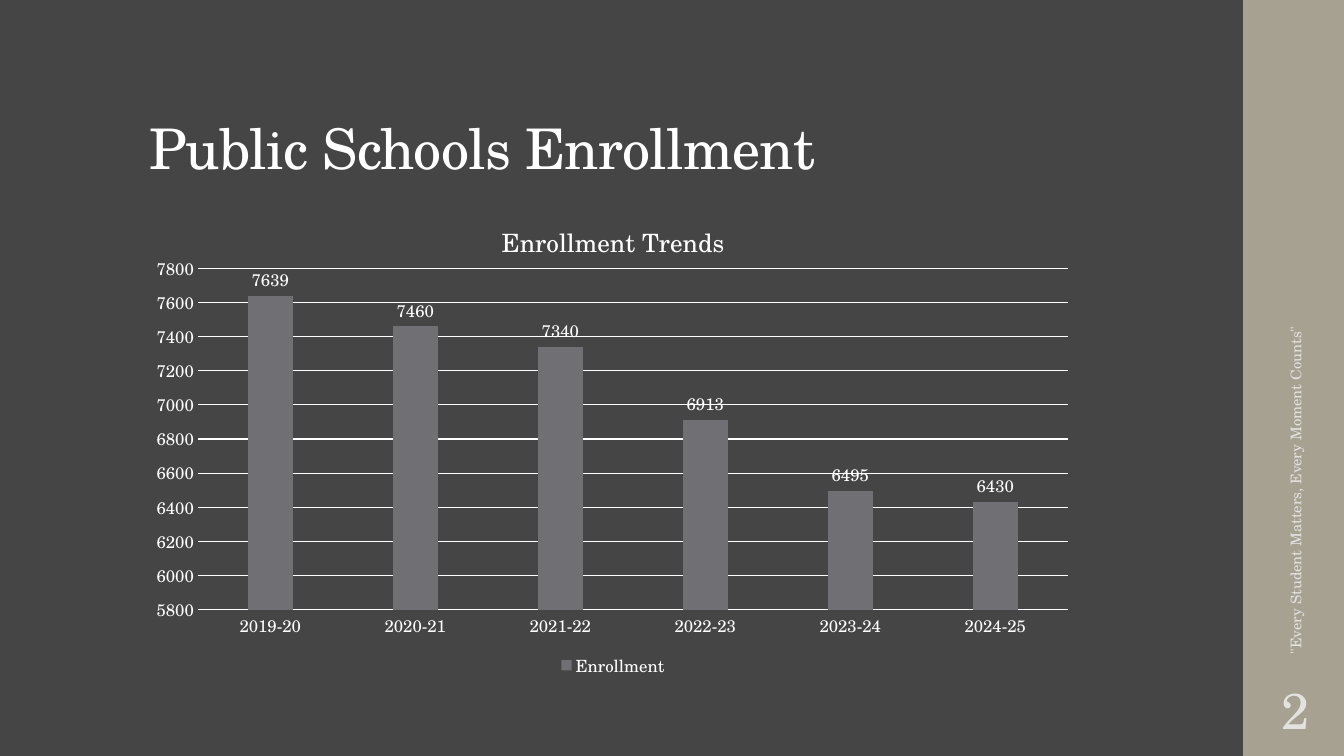
from lxml import etree
from pptx import Presentation
from pptx.chart.data import CategoryChartData
from pptx.dml.color import RGBColor
from pptx.enum import chart as charts, shapes, text
from pptx.oxml import parse_xml
from pptx.oxml.ns import nsdecls, qn
from pptx.util import Inches, Pt

FONT = "TeX Gyre Schola"
COLORS = {"background": "454545", "sidebar": "A7A192", "text": "FFFFFF", "bar": "6F6F74"}
ENROLLMENT = {"2019-20": 7639, "2020-21": 7460, "2021-22": 7340,
              "2022-23": 6913, "2023-24": 6495, "2024-25": 6430}


def style_font(font, size):
    font.name = FONT
    font.size = Pt(size)
    font.bold = False
    font.color.rgb = RGBColor.from_string(COLORS["text"])


def add_sidebar_text(wording, size, left, top, width, height):
    """Add a vertically centred text box with 70 % opaque text."""
    box = slide.shapes.add_textbox(Inches(left), Inches(top), Inches(width), Inches(height))
    box.text_frame.word_wrap = True
    box.text_frame.vertical_anchor = text.MSO_ANCHOR.MIDDLE
    paragraph = box.text_frame.paragraphs[0]
    paragraph.space_after = Pt(6)
    run = paragraph.add_run()
    run.text = wording
    style_font(run.font, size)
    color = run.font.fill._xPr.find(".//" + qn("a:srgbClr"))
    etree.SubElement(color, qn("a:alpha")).set("val", "70000")
    return box


presentation = Presentation()
presentation.slide_width = Inches(13.33)
presentation.slide_height = Inches(7.5)
slide = presentation.slides.add_slide(presentation.slide_layouts[5])
slide.background.fill.solid()
slide.background.fill.fore_color.rgb = RGBColor.from_string(COLORS["background"])

# Title
title = slide.shapes.title
title.left, title.top = Inches(1.38), Inches(0.4)
title.width, title.height = Inches(10.6), Inches(1.45)
title.text_frame.vertical_anchor = text.MSO_ANCHOR.BOTTOM
title.text_frame.auto_size = text.MSO_AUTO_SIZE.NONE
paragraph = title.text_frame.paragraphs[0]
paragraph.alignment = text.PP_ALIGN.LEFT
paragraph.line_spacing = 0.9
run = paragraph.add_run()
run.text = "Public Schools Enrollment"
style_font(run.font, 40)
run.font._element.set("spc", "-50")

# Enrollment chart
chart_data = CategoryChartData()
chart_data.categories = list(ENROLLMENT)
chart_data.add_series("Enrollment", list(ENROLLMENT.values()))
chart = slide.shapes.add_chart(
    charts.XL_CHART_TYPE.COLUMN_CLUSTERED,
    Inches(1.38), Inches(2), Inches(9.4), Inches(4.76), chart_data).chart
style_font(chart.font, 10)

chart.has_title = True
run = chart.chart_title.text_frame.paragraphs[0].add_run()
run.text = "Enrollment Trends"
style_font(run.font, 18)
chart.chart_title.include_in_layout = False

chart.has_legend = True
chart.legend.position = charts.XL_LEGEND_POSITION.BOTTOM
chart.legend.include_in_layout = False
style_font(chart.legend.font, 12)

category_axis, value_axis = chart.category_axis, chart.value_axis
for axis in (category_axis, value_axis):
    axis.major_tick_mark = axis.minor_tick_mark = charts.XL_TICK_MARK.NONE
    style_font(axis.tick_labels.font, 12)
value_axis.minimum_scale, value_axis.maximum_scale = 5800, 7800
value_axis.major_unit = 200
value_axis.format.line.fill.background()
value_axis.has_major_gridlines = True
for line in (category_axis.format.line, value_axis.major_gridlines.format.line):
    line.width = Pt(0.75)
    line.color.rgb = RGBColor.from_string(COLORS["text"])

plot = chart.plots[0]
plot.gap_width, plot.overlap = 219, -27
plot.vary_by_categories = False
series = plot.series[0]
series.format.fill.solid()
series.format.fill.fore_color.rgb = RGBColor.from_string(COLORS["bar"])
labels = series.data_labels
labels.show_value = True
labels.position = charts.XL_LABEL_POSITION.OUTSIDE_END
style_font(labels.font, 12)

plot_area = chart._chartSpace.chart.plotArea
for layout in plot_area.findall(qn("c:layout")):
    plot_area.remove(layout)
plot_area.insert(0, parse_xml(
    f'<c:layout {nsdecls("c")}><c:manualLayout><c:layoutTarget val="inner"/>'
    '<c:xMode val="edge"/><c:yMode val="edge"/><c:x val="0.062"/><c:y val="0.139"/>'
    '<c:w val="0.918"/><c:h val="0.712"/></c:manualLayout></c:layout>'))

# Sidebar
sidebar = slide.shapes.add_shape(
    shapes.MSO_SHAPE.RECTANGLE, Inches(12.33), 0, Inches(1), Inches(7.5))
sidebar.shadow.inherit = False
sidebar.fill.solid()
sidebar.fill.fore_color.rgb = RGBColor.from_string(COLORS["sidebar"])
sidebar.line.fill.background()

motto = add_sidebar_text('"Every Student Matters, Every Moment Counts"', 10.5, 10.89, 4.43, 3.92, 0.4)
motto.rotation = 270

number = add_sidebar_text("2", 36, 12.35, 6.75, 1, 0.65)
frame = number.text_frame
frame.margin_left = frame.margin_right = frame.margin_top = frame.margin_bottom = Inches(0.05)
frame.paragraphs[0].alignment = text.PP_ALIGN.CENTER
frame.paragraphs[0].line_spacing = 0.9

presentation.save("out.pptx")
